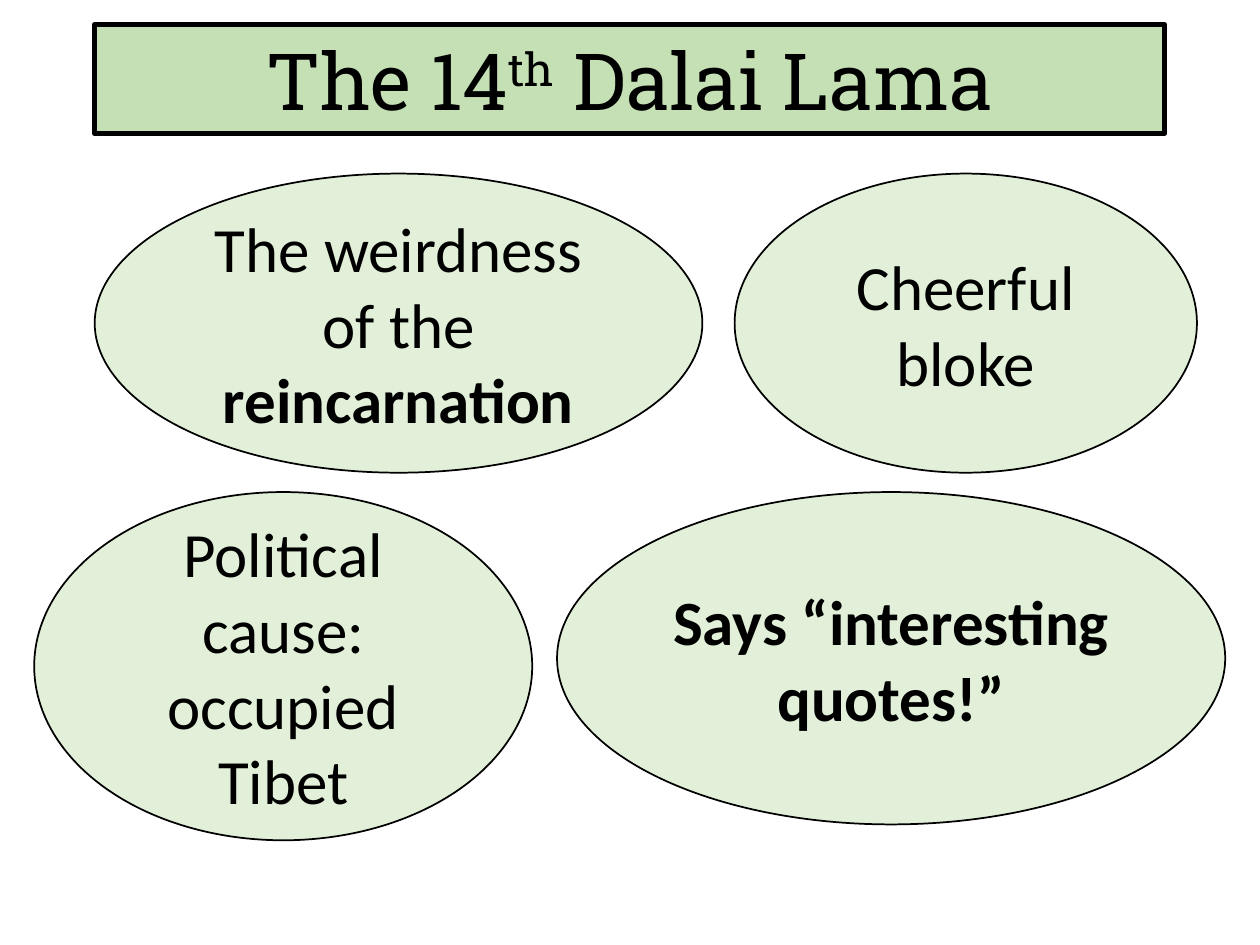
from pptx import Presentation
from pptx import util as u
from pptx.dml import color
from pptx.enum import shapes, text


def paint(shape, fill, line_width):
    shape.fill.solid()
    shape.fill.fore_color.rgb = color.RGBColor.from_string(fill)
    shape.line.color.rgb = color.RGBColor.from_string("000000")
    shape.line.width = u.Pt(line_width)
    shape.text_frame.word_wrap = True
    shape.text_frame.auto_size = text.MSO_AUTO_SIZE.NONE
    shape.text_frame.vertical_anchor = text.MSO_ANCHOR.MIDDLE


def write(shape, content, font_name, size, bold=False):
    paragraph = shape.text_frame.paragraphs[0]
    paragraph.alignment = text.PP_ALIGN.CENTER
    run = paragraph.add_run()
    run.text = content
    run.font.name = font_name
    run.font.size = u.Pt(size)
    run.font.bold = bold
    run.font.color.rgb = color.RGBColor.from_string("000000")
    return run


presentation = Presentation()
presentation.slide_width = u.Cm(25.4)
presentation.slide_height = u.Cm(19.05)
slide = presentation.slides.add_slide(presentation.slide_layouts[5])

title = slide.shapes.title
title.left, title.top = u.Cm(1.91), u.Cm(0.5)
title.width, title.height = u.Cm(21.57), u.Cm(2.19)
paint(title, "C5E0B4", 3)
write(title, "The 14", "Roboto Slab", 45)
ordinal = write(title, "th", "Roboto Slab", 45)
ordinal.font._element.set("baseline", "30000")
write(title, " Dalai Lama", "Roboto Slab", 45)

upper_row, lower_row = 3.5, 9.92
bubbles = [
    (1.91, upper_row, 12.25, 6.03, [("The weirdness of the ", False), ("reincarnation", True)]),
    (14.81, upper_row, 9.32, 6.03, [("Cheerful bloke", False)]),
    (0.69, lower_row, 10.04, 7.02, [("Political cause: occupied Tibet", False)]),
    (11.23, lower_row, 13.47, 6.7, [("Says “interesting quotes!”", True)]),
]
for left, top, width, height, runs in bubbles:
    bubble = slide.shapes.add_shape(
        shapes.MSO_SHAPE.OVAL, u.Cm(left), u.Cm(top), u.Cm(width), u.Cm(height))
    bubble.shadow.inherit = False
    paint(bubble, "E2F0D9", 1)
    for content, bold in runs:
        write(bubble, content, "Calibri", 36, bold)

presentation.save("out.pptx")
